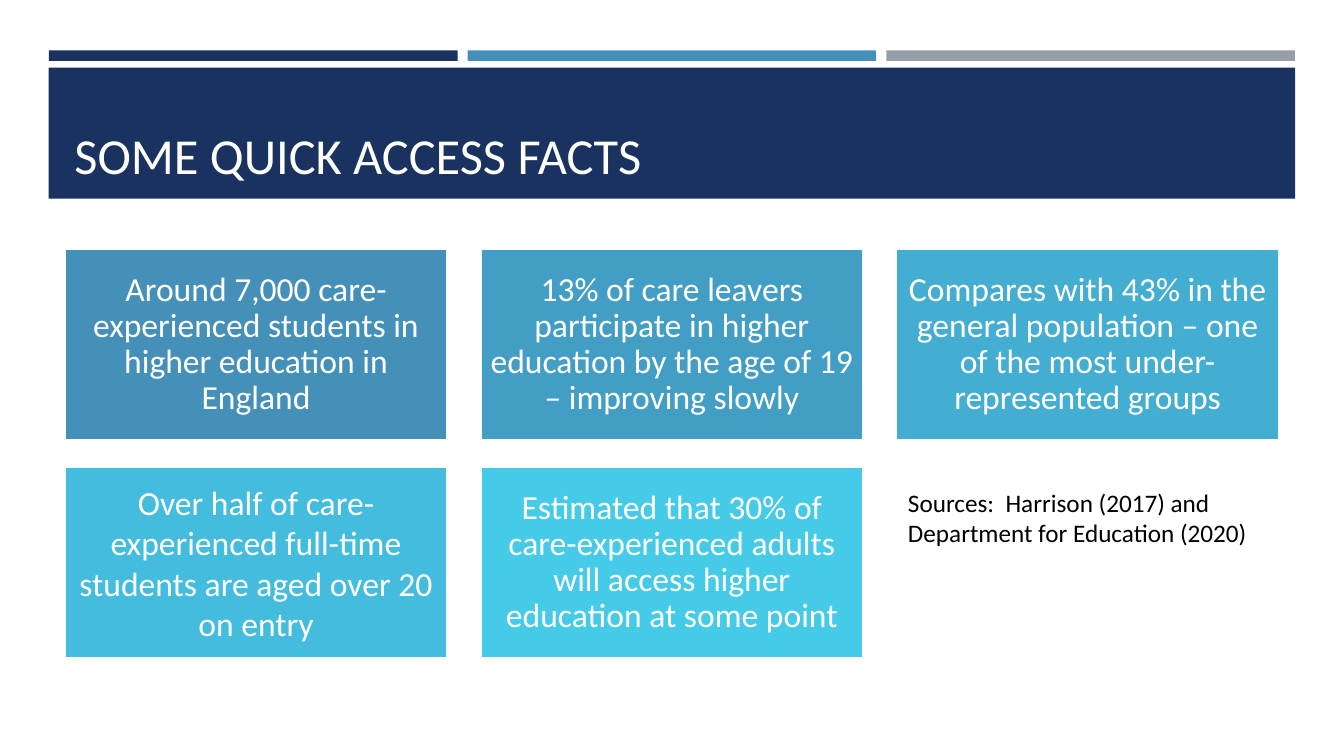
from dataclasses import dataclass

from pptx import Presentation
from pptx.dml.color import RGBColor
from pptx.enum.shapes import MSO_SHAPE as Shape
from pptx.enum.text import MSO_ANCHOR as Anchor, PP_ALIGN as Align
from pptx.util import Pt


@dataclass(frozen=True)
class Theme:
    font: str = "Calibri"
    navy: str = "1A3260"
    blue: str = "4590B8"
    grey: str = "969FA7"
    white: str = "FFFFFF"
    black: str = "000000"
    cards: tuple = ("4590B8", "439EC6", "43ADD2", "43BCDE", "45CBE8")
    title: int = 36
    body: int = 24
    note: int = 18


@dataclass(frozen=True)
class Box:
    left: float
    top: float
    width: float
    height: float

    def lengths(self):
        return [Pt(n) for n in (self.left, self.top, self.width, self.height)]

    def cell(self, col, row, cols, rows, gap_x, gap_y):
        width = (self.width - gap_x * (cols - 1)) / cols
        height = (self.height - gap_y * (rows - 1)) / rows
        return Box(self.left + col * (width + gap_x),
                   self.top + row * (height + gap_y), width, height)


THEME = Theme()

FACTS = (
    ("Around 7,000 care-experienced students in higher education in England", 0.9),
    ("13% of care leavers participate in higher education by the age of 19 – improving slowly", 0.9),
    ("Compares with 43% in the general population – one of the most under-represented groups", 0.9),
    ("Over half of care-experienced full-time students are aged over 20 on entry", 1.0),
    ("Estimated that 30% of care-experienced adults will access higher education at some point", 0.9),
)


def add_rect(slide, box, fill, line=None):
    rect = slide.shapes.add_shape(Shape.RECTANGLE, *box.lengths())
    rect.shadow.inherit = False
    rect.fill.solid()
    rect.fill.fore_color.rgb = RGBColor.from_string(fill)
    if line:
        rect.line.color.rgb = RGBColor.from_string(line)
        rect.line.width = Pt(1.75)
    else:
        rect.line.fill.background()
    return rect


def put_text(shape, text, *, size, color, align=Align.LEFT,
             anchor=Anchor.TOP, space=1.0, pad=(7.2, 3.6)):
    frame = shape.text_frame
    frame.word_wrap = True
    frame.vertical_anchor = anchor
    frame.margin_left = frame.margin_right = Pt(pad[0])
    frame.margin_top = frame.margin_bottom = Pt(pad[1])
    para = frame.paragraphs[0]
    para.alignment = align
    para.line_spacing = space
    run = para.add_run()
    run.text = text
    run.font.name = THEME.font
    run.font.size = Pt(size)
    run.font.color.rgb = RGBColor.from_string(color)


def draw_bars(slide, box):
    for col, fill in enumerate((THEME.navy, THEME.blue, THEME.grey)):
        add_rect(slide, box.cell(col, 0, 3, 1, 7.2, 0), fill)


def draw_title(slide, box, text):
    add_rect(slide, box, THEME.navy)
    inner = Box(box.left + 11.3, box.top + 7.2, box.width - 22.6, box.height - 14)
    label = slide.shapes.add_textbox(*inner.lengths())
    put_text(label, text, size=THEME.title, color=THEME.white, anchor=Anchor.BOTTOM)


def draw_facts(slide, box):
    for index, (text, space) in enumerate(FACTS):
        row, col = divmod(index, 3)
        card = add_rect(slide, box.cell(col, row, 3, 2, 23.4, 19),
                        THEME.cards[index], THEME.white)
        put_text(card, text, size=THEME.body, color=THEME.white,
                 align=Align.CENTER, anchor=Anchor.MIDDLE,
                 space=space, pad=(7.2, 7.2))


def draw_note(slide, box, text):
    cell = box.cell(2, 1, 3, 2, 23.4, 19)
    area = Box(cell.left + 1.4, cell.top + 10.8, cell.width, 51)
    note = slide.shapes.add_textbox(*area.lengths())
    put_text(note, text, size=THEME.note, color=THEME.black)


def main():
    deck = Presentation()
    deck.slide_width, deck.slide_height = Pt(960), Pt(540)
    slide = deck.slides.add_slide(deck.slide_layouts[6])
    grid = Box(46.1, 177.8, 867.6, 292.4)
    draw_bars(slide, Box(35, 36, 890, 7.5))
    draw_title(slide, Box(34.8, 48.4, 890.4, 93.6), "SOME QUICK ACCESS FACTS")
    draw_facts(slide, grid)
    draw_note(slide, grid, "Sources:  Harrison (2017) and Department for Education (2020)")
    deck.save("out.pptx")


if __name__ == "__main__":
    main()
